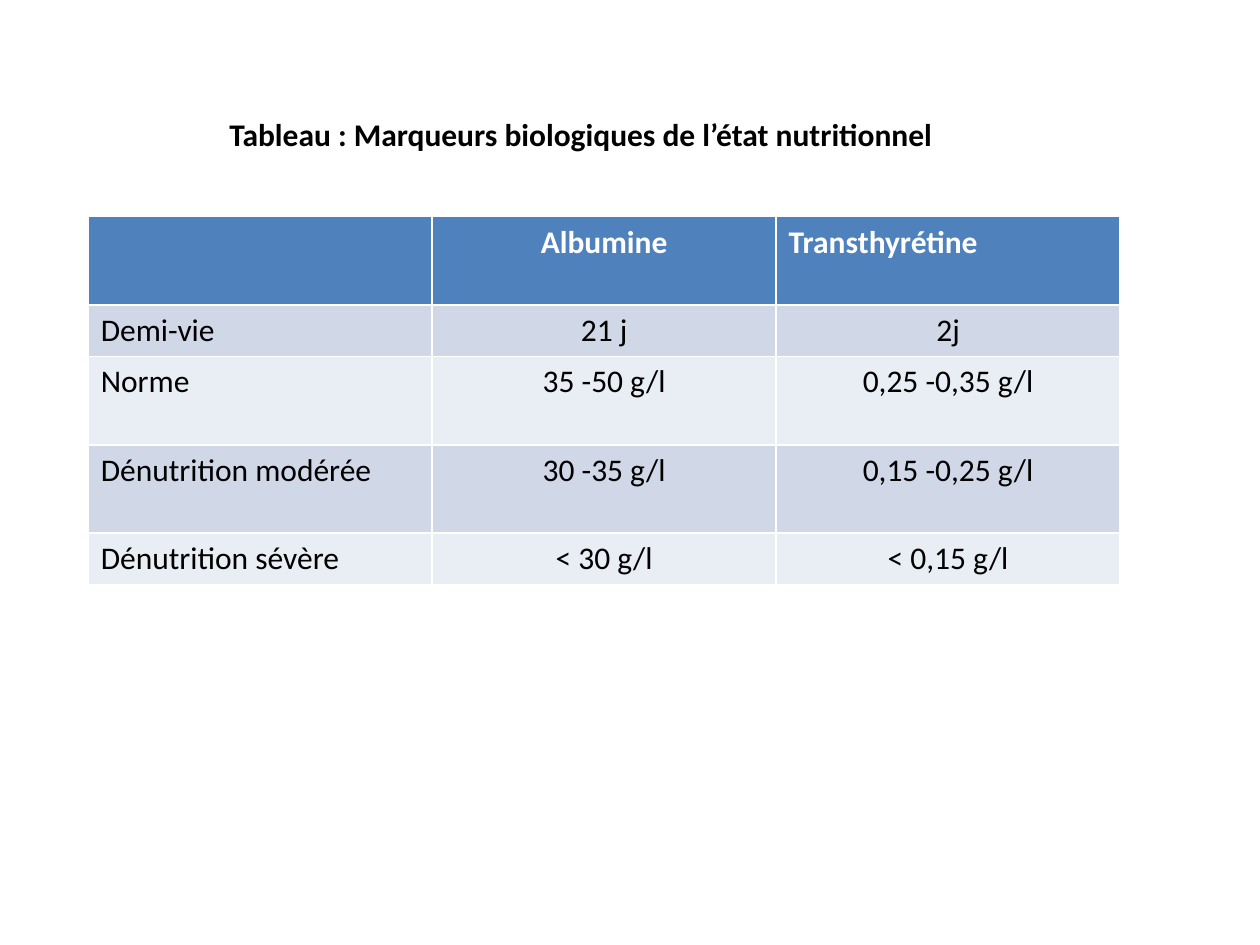
from pptx import Presentation
from pptx.dml.color import RGBColor
from pptx.enum.text import MSO_ANCHOR, MSO_AUTO_SIZE, PP_ALIGN
from pptx.util import Inches, Pt

COLORS = {
    "text": "000000",
    "header_text": "FFFFFF",
    "header": "4F81BD",
    "odd_row": "D0D8E8",
    "even_row": "E9EDF4",
}
MARKERS = [
    ("", "Albumine", "Transthyrétine"),
    ("Demi-vie", "21 j", "2j"),
    ("Norme", "35 -50 g/l", "0,25 -0,35 g/l"),
    ("Dénutrition modérée", "30 -35 g/l", "0,15 -0,25 g/l"),
    ("Dénutrition sévère", "< 30 g/l", "< 0,15 g/l"),
]
COLUMN_WIDTH = 2.73
SINGLE, TALL = 0.41, 0.7
ROW_HEIGHTS = [TALL, SINGLE, TALL, TALL, SINGLE]


def write(frame, text, color, bold=False, align=PP_ALIGN.LEFT):
    """Put one formatted run in the first paragraph of a text frame."""
    paragraph = frame.paragraphs[0]
    paragraph.alignment = align
    run = paragraph.add_run()
    run.text = text
    run.font.name = "Calibri"
    run.font.size = Pt(18)
    run.font.bold = bold
    run.font.color.rgb = RGBColor.from_string(COLORS[color])


def add_caption(slide, text):
    """Place the table caption in the title placeholder."""
    caption = slide.shapes.title
    caption.left, caption.top = Inches(1.72), Inches(0.86)
    caption.width, caption.height = Inches(7.42), Inches(0.4)
    frame = caption.text_frame
    frame.word_wrap = True
    frame.auto_size = MSO_AUTO_SIZE.SHAPE_TO_FIT_TEXT
    frame.vertical_anchor = MSO_ANCHOR.TOP
    write(frame, text, "text", bold=True)


def fill_cell(cell, text, row, column):
    """Colour one cell and write its text according to its place."""
    header = row == 0
    band = "header" if header else "odd_row" if row % 2 else "even_row"
    cell.fill.solid()
    cell.fill.fore_color.rgb = RGBColor.from_string(COLORS[band])
    centred = column == 1 or (column == 2 and not header)
    if text:
        write(cell.text_frame, text, "header_text" if header else "text",
              header, PP_ALIGN.CENTER if centred else PP_ALIGN.LEFT)


def add_marker_table(slide):
    """Build the table of nutritional markers."""
    column_count = len(MARKERS[0])
    table = slide.shapes.add_table(
        len(MARKERS), column_count, Inches(0.7), Inches(1.72),
        Inches(COLUMN_WIDTH * column_count), Inches(sum(ROW_HEIGHTS))).table
    for column in table.columns:
        column.width = Inches(COLUMN_WIDTH)
    for row, (height, texts) in enumerate(zip(ROW_HEIGHTS, MARKERS)):
        table.rows[row].height = Inches(height)
        for column, text in enumerate(texts):
            fill_cell(table.cell(row, column), text, row, column)


def main():
    """Create the slide and save it."""
    presentation = Presentation()
    presentation.slide_width, presentation.slide_height = Inches(10), Inches(7.5)
    slide = presentation.slides.add_slide(presentation.slide_layouts[5])
    add_caption(slide, "Tableau : Marqueurs biologiques de l’état nutritionnel")
    add_marker_table(slide)
    presentation.save("out.pptx")


if __name__ == "__main__":
    main()
